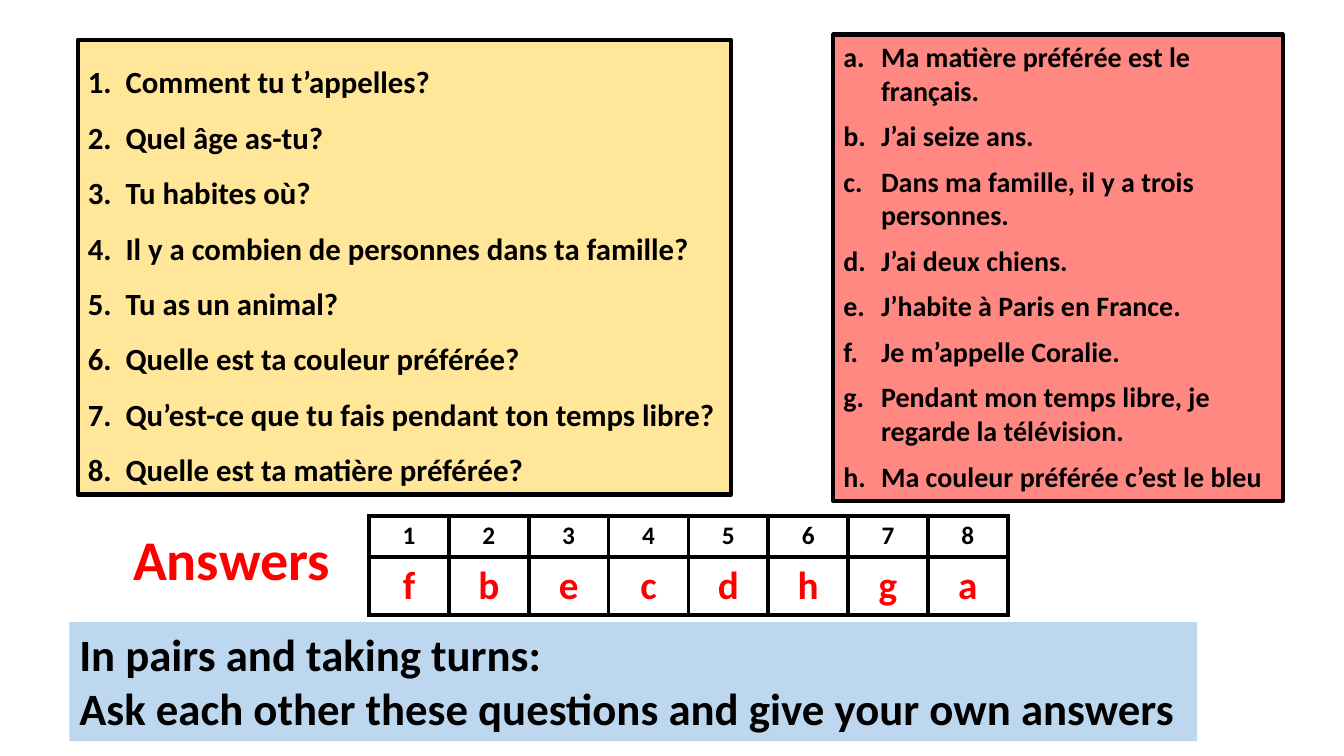
from lxml import etree
from pptx import Presentation
from pptx.dml.color import RGBColor
from pptx.enum.text import MSO_ANCHOR, MSO_AUTO_SIZE, PP_ALIGN
from pptx.oxml.ns import qn
from pptx.util import Cm, Pt

LEFT, CENTER = PP_ALIGN.LEFT, PP_ALIGN.CENTER
TOP = MSO_ANCHOR.TOP
NO_AUTOFIT = MSO_AUTO_SIZE.NONE
TWO_CONTENT = 3
COLORS = {
    "ink": "000000",
    "answer": "FF0000",
    "questions": "FFE699",
    "replies": "FF8982",
    "task": "BDD7EE",
}

QUESTIONS = [
    "Comment tu t’appelles?",
    "Quel âge as-tu?",
    "Tu habites où?",
    "Il y a combien de personnes dans ta famille?",
    "Tu as un animal?",
    "Quelle est ta couleur préférée?",
    "Qu’est-ce que tu fais pendant ton temps libre?",
    "Quelle est ta matière préférée?",
]
REPLIES = [
    "Ma matière préférée est le français.",
    "J’ai seize ans.",
    "Dans ma famille, il y a trois personnes.",
    "J’ai deux chiens.",
    "J’habite à Paris en France.",
    "Je m’appelle Coralie.",
    "Pendant mon temps libre, je regarde la télévision.",
    "Ma couleur préférée c’est le bleu",
]
TASK = [
    "In pairs and taking turns:",
    "Ask each other these questions and give your own answers",
]
ANSWER_KEY = "fbecdhga"


class Worksheet:
    """Holds the style and the current slide."""

    font_name = "Calibri"
    border = Pt(3)
    indent = Cm(0.95)

    def __init__(self, slide):
        self.slide = slide

    def color(self, name):
        return RGBColor.from_string(COLORS[name])

    def style(self, paragraph, size, color="ink", align=LEFT):
        paragraph.alignment = align
        font = paragraph.font
        font.name, font.size, font.bold = self.font_name, Pt(size), True
        font.color.rgb = self.color(color)

    def place(self, shape, left, top, width, height):
        shape.left, shape.top = Cm(left), Cm(top)
        shape.width, shape.height = Cm(width), Cm(height)

    def fill_text(self, shape, lines, size, color="ink", spacing=1.0, gap=0):
        frame = shape.text_frame
        frame.text = "\n".join(lines)
        frame.word_wrap = True
        frame.auto_size = NO_AUTOFIT
        frame.vertical_anchor = TOP
        for index, paragraph in enumerate(frame.paragraphs):
            paragraph.line_spacing = spacing
            paragraph.space_before = Pt(gap if index else 0)
            paragraph.space_after = Pt(0)
            self.style(paragraph, size, color)

    def title(self, text, box, size):
        heading = self.slide.shapes.title
        self.place(heading, *box)
        self.fill_text(heading, [text], size, "answer")

    def numbered_list(self, index, items, box, fill, scheme, size, **spacing):
        panel = self.slide.placeholders[index]
        self.place(panel, *box)
        panel.fill.solid()
        panel.fill.fore_color.rgb = self.color(fill)
        panel.line.color.rgb = self.color("ink")
        panel.line.width = self.border
        self.fill_text(panel, items, size, **spacing)
        for paragraph in panel.text_frame.paragraphs:
            props = paragraph._p.get_or_add_pPr()
            props.set("marL", str(self.indent))
            props.set("indent", str(-self.indent))
            # Numbering goes ahead of the default run properties
            bullet_font = etree.Element(qn("a:buFont"), typeface="+mj-lt")
            numbering = etree.Element(qn("a:buAutoNum"), type=scheme)
            run_props = props.find(qn("a:defRPr"))
            run_props.addprevious(bullet_font)
            run_props.addprevious(numbering)

    def banner(self, lines, box, fill, size):
        panel = self.slide.shapes.add_textbox(*map(Cm, box))
        panel.fill.solid()
        panel.fill.fore_color.rgb = self.color(fill)
        self.fill_text(panel, lines, size)

    def cell_borders(self, cell):
        props = cell._tc.get_or_add_tcPr()
        for position, side in enumerate(("lnL", "lnR", "lnT", "lnB")):
            line = etree.Element(qn(f"a:{side}"), w=str(self.border))
            fill = etree.SubElement(line, qn("a:solidFill"))
            etree.SubElement(fill, qn("a:srgbClr"), val=COLORS["ink"])
            props.insert(position, line)

    def answer_table(self, rows, box, row_styles):
        frame = self.slide.shapes.add_table(len(rows), len(rows[0]), *map(Cm, box))
        table = frame.table
        table.first_row = table.horz_banding = False
        for row, texts, (height, size, color) in zip(table.rows, rows, row_styles):
            row.height = Cm(height)
            for cell, text in zip(row.cells, texts):
                cell.text = text
                cell.fill.background()
                self.cell_borders(cell)
                self.style(cell.text_frame.paragraphs[0], size, color, CENTER)


def main():
    prs = Presentation()
    prs.slide_width, prs.slide_height = Cm(33.87), Cm(19.05)
    sheet = Worksheet(prs.slides.add_slide(prs.slide_layouts[TWO_CONTENT]))

    # Questions and the replies to match
    sheet.numbered_list(1, QUESTIONS, (1.96, 1, 16.46, 11.46), "questions",
                        "arabicPeriod", 22, spacing=1.5)
    sheet.numbered_list(2, REPLIES, (21, 0.87, 11.33, 11.76), "replies",
                        "alphaLcPeriod", 20, gap=8.5)

    # Answer key
    sheet.title("Answers", (3.1, 13.08, 5.56, 1.96), 40)
    numbers = [str(n) for n in range(1, len(ANSWER_KEY) + 1)]
    sheet.answer_table([numbers, ANSWER_KEY], (9.3, 13, 16.1, 2.46),
                       [(1.04, 18, "ink"), (1.42, 28, "answer")])

    # Speaking task
    sheet.banner(TASK, (1.75, 15.68, 28.42, 3), "task", 32)

    prs.save("out.pptx")


if __name__ == "__main__":
    main()
